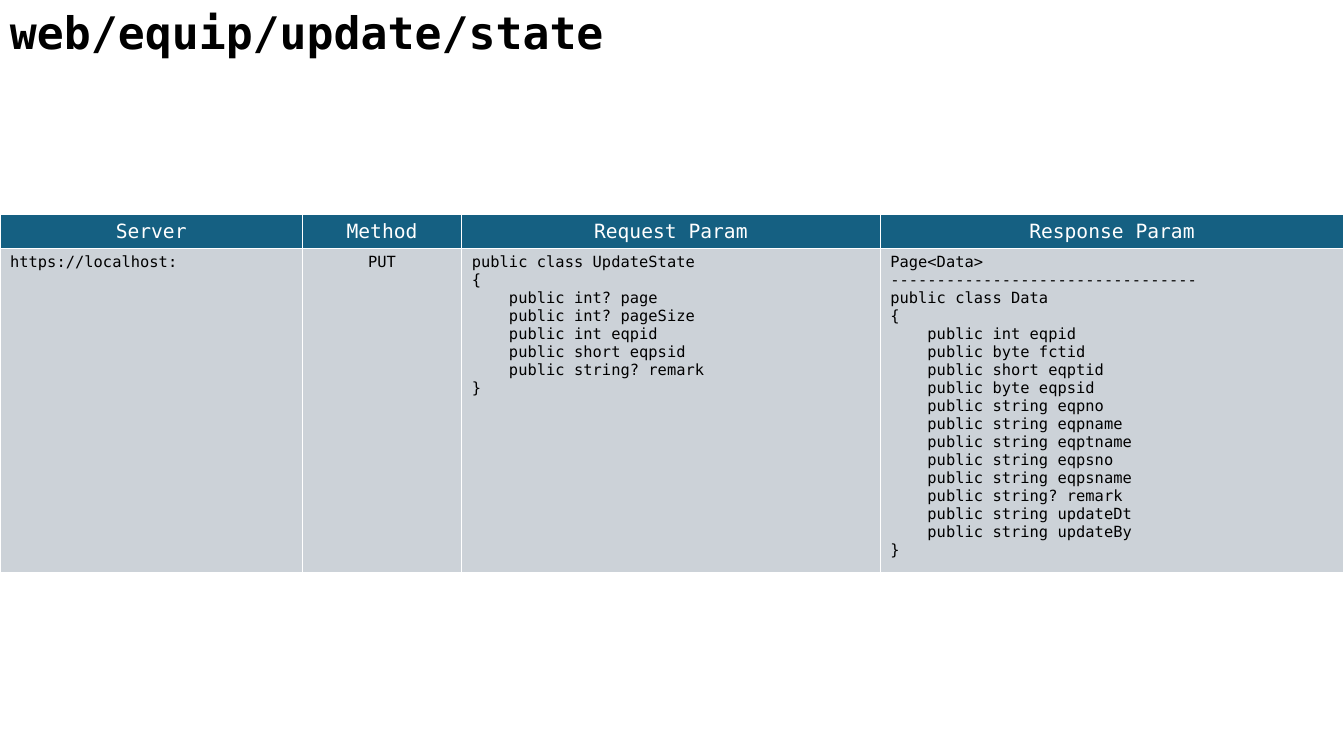
from lxml import etree
from pptx import Presentation
from pptx.dml.color import RGBColor
from pptx.enum.text import MSO_AUTO_SIZE, PP_ALIGN
from pptx.oxml.ns import qn
from pptx.util import Inches, Pt

FONT = "DejaVu Sans Mono"
WHITE, BLACK, TEAL, GREY = "FFFFFF", "000000", "156082", "CCD2D8"
REQUEST = """public class UpdateState
{
    public int? page
    public int? pageSize
    public int eqpid
    public short eqpsid
    public string? remark
}"""
RESPONSE = """Page<Data>
---------------------------------
public class Data
{
    public int eqpid
    public byte fctid
    public short eqptid
    public byte eqpsid
    public string eqpno
    public string eqpname
    public string eqptname
    public string eqpsno
    public string eqpsname
    public string? remark
    public string updateDt
    public string updateBy
}"""
COLUMNS = [
    ("Server", 3, "https://localhost:", PP_ALIGN.LEFT),
    ("Method", 1.58, "PUT", PP_ALIGN.CENTER),
    ("Request Param", 4.15, REQUEST, PP_ALIGN.LEFT),
    ("Response Param", 4.6, RESPONSE, PP_ALIGN.LEFT),
]


def write(tf, text, size, color, align=PP_ALIGN.LEFT, bold=False):
    tf.text = text
    for p in tf.paragraphs:
        p.alignment = align
        for r in p.runs:
            r.font.name = FONT
            r.font.size = Pt(size)
            r.font.bold = bold
            r.font.color.rgb = RGBColor.from_string(color)


def style_cell(cell, fill):
    tc_pr = cell._tc.get_or_add_tcPr()
    for side in ("lnL", "lnR", "lnT", "lnB"):
        ln = etree.SubElement(tc_pr, qn(f"a:{side}"), w=str(Pt(1)))
        solid = etree.SubElement(ln, qn("a:solidFill"))
        etree.SubElement(solid, qn("a:srgbClr"), val=WHITE)
    cell.fill.solid()
    cell.fill.fore_color.rgb = RGBColor.from_string(fill)


prs = Presentation()
prs.slide_width = Inches(13.33)
prs.slide_height = Inches(7.5)
s = prs.slides.add_slide(prs.slide_layouts[6])

title = s.shapes.add_textbox(0, 0, Inches(9.45), Inches(0.64))
tf = title.text_frame
tf.word_wrap = True
tf.auto_size = MSO_AUTO_SIZE.SHAPE_TO_FIT_TEXT
write(tf, "web/equip/update/state", 32, BLACK, bold=True)

table = s.shapes.add_table(
    2, len(COLUMNS), 0, Inches(2.13), Inches(13.33), Inches(3.55)
).table
table.rows[0].height = Inches(0.33)
table.rows[1].height = Inches(3.22)

for col, (heading, width, body, align) in enumerate(COLUMNS):
    table.columns[col].width = Inches(width)
    head_cell, body_cell = table.cell(0, col), table.cell(1, col)
    write(head_cell.text_frame, heading, 14, WHITE, PP_ALIGN.CENTER)
    write(body_cell.text_frame, body, 11, BLACK, align)
    style_cell(head_cell, TEAL)
    style_cell(body_cell, GREY)

prs.save("out.pptx")
